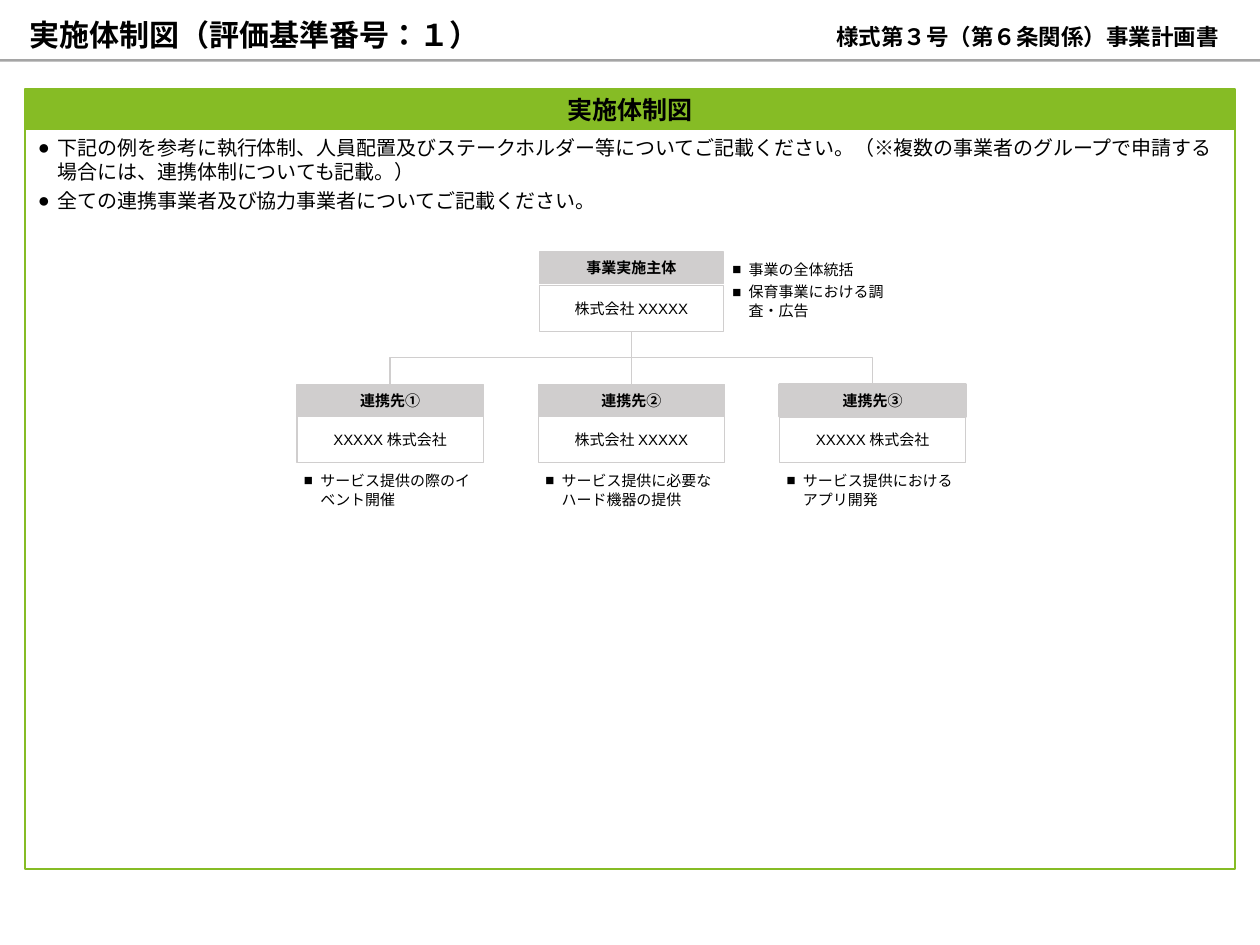
import pptx
import pptx.util
import pptx.dml.color
import pptx.enum.lang
import pptx.enum.shapes
import pptx.enum.text
import pptx.oxml.ns
from lxml import etree

Cm, Pt = pptx.util.Cm, pptx.util.Pt
RGB = pptx.dml.color.RGBColor.from_string
KIND = pptx.enum.shapes.MSO_SHAPE.RECTANGLE
LINK = pptx.enum.shapes.MSO_CONNECTOR
ANCHOR = pptx.enum.text.MSO_ANCHOR
ALIGN = pptx.enum.text.PP_ALIGN
TONGUE = pptx.enum.lang.MSO_LANGUAGE_ID.JAPANESE
qn = pptx.oxml.ns.qn

THEME = {
    "ink": "000000", "paper": "FFFFFF", "green": "86BC25",
    "gray": "D0CECE", "rule": "A5A5A5",
    "main": "Calibri", "card": "Arial", "form": "Noto Sans CJK JP",
    "title": 24, "label": 18, "head": 20, "body": 16, "small": 12,
}
TITLE = "実施体制図（評価基準番号：１）"
FORM = "様式第３号（第６条関係）事業計画書"
HEAD = "実施体制図"
GUIDE = [
    "下記の例を参考に執行体制、人員配置及びステークホルダー等についてご記載ください。（※複数の事業者のグループで申請する場合には、連携体制についても記載。）",
    "全ての連携事業者及び協力事業者についてご記載ください。",
]
LEAD = {
    "role": "事業実施主体",
    "firm": [("株式会社", "main"), ("XXXXX", "card")],
    "tasks": ["事業の全体統括", "保育事業における調査・広告"],
}
ALLIES = [
    {"role": "連携先①", "firm": [("XXXXX", "card"), ("株式会社", "main")],
     "tasks": ["サービス提供の際のイベント開催"], "edge": 1},
    {"role": "連携先②", "firm": [("株式会社XXXXX", "card")],
     "tasks": ["サービス提供に必要なハード機器の提供"], "edge": 1},
    {"role": "連携先③", "firm": [("XXXXX株式会社", "card")],
     "tasks": ["サービス提供におけるアプリ開発"], "edge": 2},
]
DOT = {"mark": "●", "hang": 0.56, "gap": 4.3, "lead": None}
BOX = {"mark": "■", "hang": 0.46, "gap": 3, "lead": 1.06}


def face(font, name):
    font.name = THEME[name]
    etree.SubElement(font._element, qn("a:ea"), typeface=THEME[name])


def write(shape, paras, size, name="main", bold=False, align=ALIGN.LEFT,
          anchor=ANCHOR.TOP, inset=(0, 0), bullet=None):
    frame = shape.text_frame
    frame.word_wrap = True
    frame.vertical_anchor = anchor
    frame.margin_left = frame.margin_right = Cm(inset[0])
    frame.margin_top = frame.margin_bottom = Cm(inset[1])
    for i, item in enumerate(paras):
        para = frame.add_paragraph() if i else frame.paragraphs[0]
        para.alignment = align
        runs = [(item, name)] if isinstance(item, str) else item
        if bullet:
            props = para._p.get_or_add_pPr()
            props.set("marL", str(Cm(bullet["hang"])))
            props.set("indent", str(-Cm(bullet["hang"])))
            if bullet["lead"]:
                para.line_spacing = bullet["lead"]
            if i:
                para.space_before = Pt(bullet["gap"])
            etree.SubElement(props, qn("a:buFont"), typeface=THEME["card"])
            etree.SubElement(props, qn("a:buChar"), char=bullet["mark"])
        para.font.size = Pt(THEME[size])
        para.font.bold = bold
        para.font.color.rgb = RGB(THEME["ink"])
        if len(runs) == 1:
            face(para.font, runs[0][1])
        for text, kind in runs:
            run = para.add_run()
            run.text = text
            run.font.language_id = TONGUE
            if len(runs) > 1:
                face(run.font, kind)


def block(page, area, fill, line=None, width=1):
    shape = page.shapes.add_shape(KIND, *map(Cm, area))
    shape.shadow.inherit = False
    shape.fill.solid()
    shape.fill.fore_color.rgb = RGB(THEME[fill])
    if line:
        shape.line.color.rgb = RGB(THEME[line])
        shape.line.width = Pt(width)
    else:
        shape.line.fill.background()
    return shape


def label(page, area, *args, **style):
    write(page.shapes.add_textbox(*map(Cm, area)), *args, **style)


def card(page, left, top, wide, data, skip=0.9):
    look = dict(align=ALIGN.CENTER, anchor=ANCHOR.MIDDLE, inset=(0.2, 0.2))
    firm = block(page, (left, top + skip, wide, 1.3), "paper", "gray")
    write(firm, [data["firm"]], "small", "card", **look)
    role = block(page, (left, top, wide, 0.9), "gray", "gray", data.get("edge", 1))
    write(role, [data["role"]], "small", "card", True, **look)
    return role, firm


def link(page, kind, *ends):
    line = page.shapes.add_connector(kind, *map(Cm, ends))
    line.line.color.rgb = RGB(THEME["gray"])
    line.line.width = Pt(1)
    etree.SubElement(line._element.spPr, qn("a:effectLst"))
    return line


def main():
    """Build the organisation chart slide."""
    deck = pptx.Presentation()
    deck.slide_width, deck.slide_height = Cm(35.56), Cm(26.67)
    page = deck.slides.add_slide(deck.slide_layouts[6])

    label(page, (0.84, 0.53, 17.45, 0.94), [TITLE], "title", bold=True, anchor=ANCHOR.BOTTOM)
    label(page, (23.14, 0.79, 11.71, 0.61), [FORM], "label", "form", True,
          ALIGN.CENTER, ANCHOR.BOTTOM)
    block(page, (0, 1.67, 35.56, 0.07), "rule")
    bar = block(page, (0.71, 2.52, 34.14, 1.16), "green", "green", 1.5)
    write(bar, [HEAD], "head", bold=True, align=ALIGN.CENTER,
          anchor=ANCHOR.MIDDLE, inset=(0.36, 0.18))
    panel = block(page, (0.71, 3.64, 34.14, 20.88), "paper", "green", 1.5)
    write(panel, GUIDE, "body", inset=(0.36, 0.18), bullet=DOT)

    left, step, wide = 8.38, 6.81, 5.26
    start, row = 9.35, 10.85
    mid = left + step + wide / 2
    half, high = (row - start) / 2, (row + start) / 2
    for side, turn in ((-1, 90), (1, 270)):
        hub = mid + side * step / 2
        elbow = link(page, LINK.ELBOW, hub + side * half, high - step / 2,
                     hub - side * half, high + step / 2)
        elbow._element.spPr.find(qn("a:xfrm")).set("rot", str(turn * 60000))

    chief = card(page, mid - 2.6, 7.11, 5.2, LEAD, 0.94)
    label(page, (20.47, 7.11, wide, 2.21), LEAD["tasks"], "small",
          inset=(0.2, 0.2), bullet=BOX)
    heads = []
    for i, ally in enumerate(ALLIES):
        spot = left + i * step
        heads.append(card(page, spot, row, wide, ally)[0])
        label(page, (spot, 13.08, wide, 2.01), ally["tasks"], "small",
              inset=(0.2, 0.2), bullet=BOX)
    stem = link(page, LINK.STRAIGHT, mid, row, mid, start)
    stem.begin_connect(heads[1], 0)
    stem.end_connect(chief[1], 2)
    deck.save("out.pptx")


if __name__ == "__main__":
    main()
